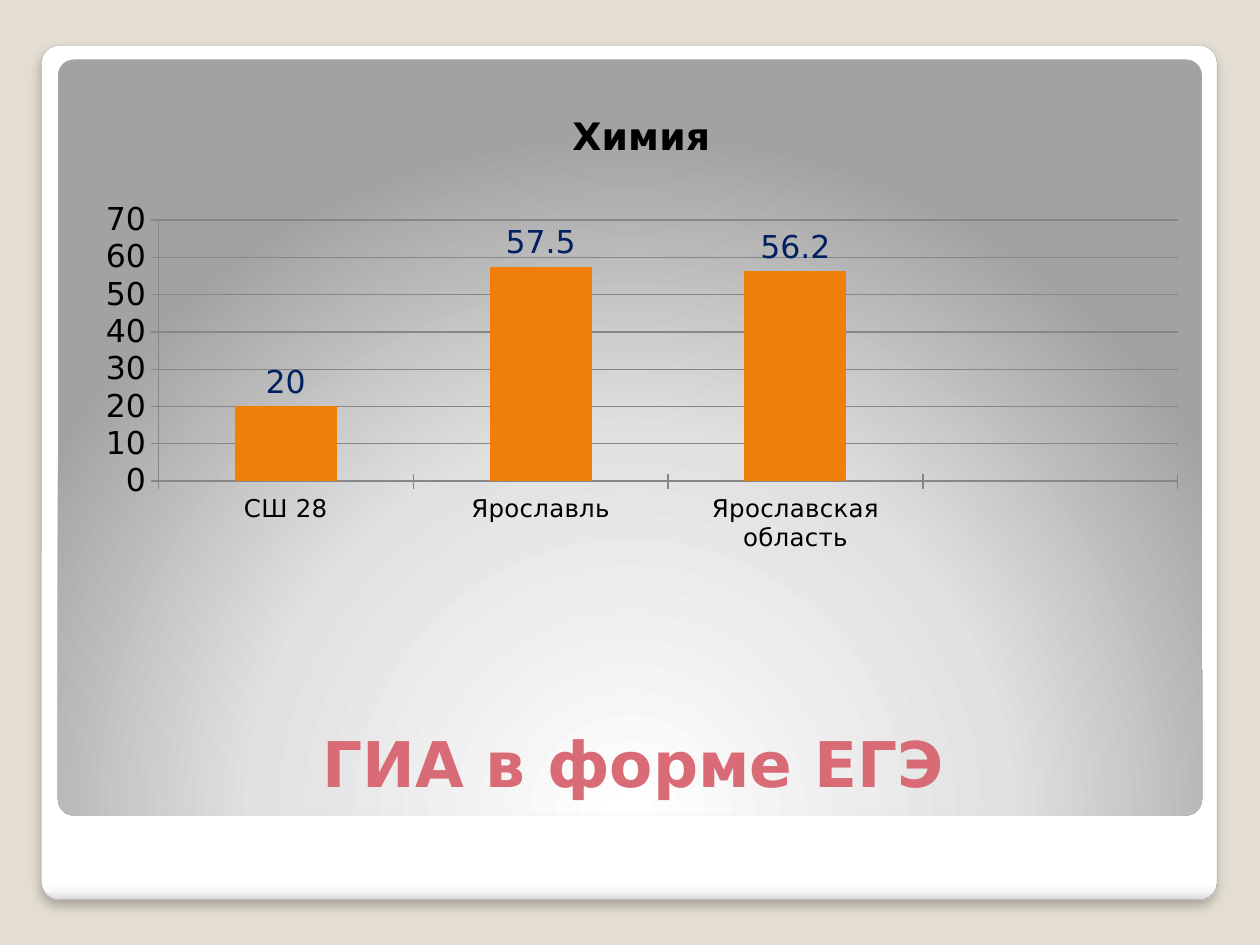
from dataclasses import dataclass

from lxml import etree
from pptx import Presentation
from pptx.chart.data import CategoryChartData
from pptx.dml.color import RGBColor
from pptx.enum.chart import XL_CHART_TYPE, XL_LABEL_POSITION, XL_TICK_MARK
from pptx.enum.shapes import MSO_SHAPE
from pptx.enum.text import MSO_ANCHOR, PP_ALIGN
from pptx.oxml import parse_xml
from pptx.oxml.ns import qn
from pptx.util import Inches, Pt

COLUMNS = XL_CHART_TYPE.COLUMN_CLUSTERED
ABOVE = XL_LABEL_POSITION.OUTSIDE_END
CROSS = XL_TICK_MARK.CROSS
ROUNDED = MSO_SHAPE.ROUNDED_RECTANGLE
BOTTOM = MSO_ANCHOR.BOTTOM
CENTER = PP_ALIGN.CENTER
DRAWING_NS = "http://schemas.openxmlformats.org/drawingml/2006/main"
WIDTH, HEIGHT = Inches(10), Inches(7.5)


@dataclass(frozen=True)
class Theme:
    font: str = "DejaVu Sans"
    background: str = "E3DED1"
    border: str = "A4A4A4"
    heading: str = "D96B77"
    bar: str = "F07F09"
    label: str = "002060"
    text: str = "000000"
    grid: str = "878787"
    heading_size: float = 36
    chart_title_size: float = 21.6
    chart_size: float = 18
    category_size: float = 14


THEME = Theme()
CARD_STOPS = [(0, "FFFFFF"), (98, "FFFFFF"), (99, "F7F7F7"), (100, "DADADA")]
PANEL_STOPS = [(0, "FFFFFF"), (55, "E1E1E1"), (100, "A2A2A2")]
DOWNWARD = '<a:lin ang="5400000" scaled="0"/>'
FROM_BELOW = (
    '<a:path path="circle">'
    '<a:fillToRect l="50000" t="175000" r="50000" b="-75000"/></a:path>'
)


def rgb(value):
    return RGBColor.from_string(value)


def place(left, top, width, height):
    return (
        round(left * WIDTH),
        round(top * HEIGHT),
        round(width * WIDTH),
        round(height * HEIGHT),
    )


def style_font(font, size, color, bold=False):
    font.name = THEME.font
    font.size = Pt(size)
    font.bold = bold
    font.color.rgb = rgb(color)


def add_gradient_card(s, box, stops, direction):
    sp = s.shapes.add_shape(ROUNDED, *place(*box))
    sp.adjustments[0] = 0.021
    sp.shadow.inherit = False
    sp.line.fill.background()
    gs = "".join(
        f'<a:gs pos="{pos * 1000}"><a:srgbClr val="{color}"/></a:gs>'
        for pos, color in stops
    )
    fill = parse_xml(
        f'<a:gradFill xmlns:a="{DRAWING_NS}" rotWithShape="1">'
        f"<a:gsLst>{gs}</a:gsLst>{direction}</a:gradFill>"
    )
    sp._element.spPr.find(qn("a:prstGeom")).addnext(fill)
    return sp


def add_soft_shadow(sp):
    effects = sp._element.spPr.find(qn("a:effectLst"))
    shadow = etree.SubElement(
        effects,
        qn("a:outerShdw"),
        blurRad=str(Pt(6)),
        dist=str(Pt(4)),
        dir="5400000",
        algn="t",
        rotWithShape="0",
    )
    color = etree.SubElement(shadow, qn("a:srgbClr"), val="000000")
    etree.SubElement(color, qn("a:alpha"), val="25000")


def add_heading(s, box, text):
    tf = s.shapes.add_textbox(*place(*box)).text_frame
    tf.word_wrap = True
    tf.vertical_anchor = BOTTOM
    p = tf.paragraphs[0]
    p.text = text
    p.alignment = CENTER
    style_font(p.font, THEME.heading_size, THEME.heading, True)


def set_layout(parent, **values):
    old = parent.find(qn("c:layout"))
    layout = etree.Element(qn("c:layout"))
    manual = etree.SubElement(layout, qn("c:manualLayout"))
    for name, value in values.items():
        etree.SubElement(manual, qn(f"c:{name}"), val=str(value))
    if old is not None:
        parent.replace(old, layout)
    elif parent.find(qn("c:tx")) is not None:
        parent.find(qn("c:tx")).addnext(layout)
    else:
        parent.insert(0, layout)


def style_axis(axis, size):
    axis.major_tick_mark = CROSS
    style_font(axis.tick_labels.font, size, THEME.text)
    axis.format.line.color.rgb = rgb(THEME.grid)
    axis.format.line.width = Pt(0.75)


def add_column_chart(s, box, title, categories, values):
    data = CategoryChartData()
    data.categories = categories
    data.add_series("Series 1", values)
    chart = s.shapes.add_chart(COLUMNS, *place(*box), data).chart
    style_font(chart.font, THEME.chart_size, THEME.text)
    chart.has_legend = False

    chart.has_title = True
    p = chart.chart_title.text_frame.paragraphs[0]
    p.text = title
    style_font(p.font, THEME.chart_title_size, THEME.text, True)
    set_layout(chart.chart_title._element, xMode="edge", yMode="edge", x=0.44, y=0.05)
    set_layout(
        chart._chartSpace.chart.plotArea,
        layoutTarget="inner", xMode="edge", yMode="edge",
        x=0.079, y=0.235, w=0.904, h=0.417,
    )

    style_axis(chart.category_axis, THEME.category_size)
    axis = chart.value_axis
    style_axis(axis, THEME.chart_size)
    axis.minimum_scale, axis.maximum_scale, axis.major_unit = 0, 70, 10
    axis.major_gridlines.format.line.color.rgb = rgb(THEME.grid)
    axis.major_gridlines.format.line.width = Pt(0.75)

    plot = chart.plots[0]
    plot.gap_width = 150
    plot.vary_by_categories = False
    series = plot.series[0]
    series.format.fill.solid()
    series.format.fill.fore_color.rgb = rgb(THEME.bar)
    labels = series.data_labels
    labels.show_value = True
    labels.position = ABOVE
    style_font(labels.font, THEME.chart_size, THEME.label)


def main():
    prs = Presentation()
    prs.slide_width, prs.slide_height = WIDTH, HEIGHT
    s = prs.slides.add_slide(prs.slide_layouts[6])
    s.background.fill.solid()
    s.background.fill.fore_color.rgb = rgb(THEME.background)

    card = add_gradient_card(s, (0.033, 0.048, 0.933, 0.904), CARD_STOPS, DOWNWARD)
    card.line.color.rgb = rgb(THEME.border)
    card.line.width = Pt(0.16)
    add_soft_shadow(card)
    add_gradient_card(s, (0.046, 0.063, 0.908, 0.8), PANEL_STOPS, FROM_BELOW)

    add_heading(s, (0.055, 0.697, 0.895, 0.156), "ГИА в форме ЕГЭ")
    add_column_chart(
        s,
        (0.055, 0.077, 0.895, 0.663),
        "Химия",
        ["СШ 28", "Ярославль", "Ярославская область", ""],
        [20, 57.5, 56.2, None],
    )
    prs.save("out.pptx")


if __name__ == "__main__":
    main()
